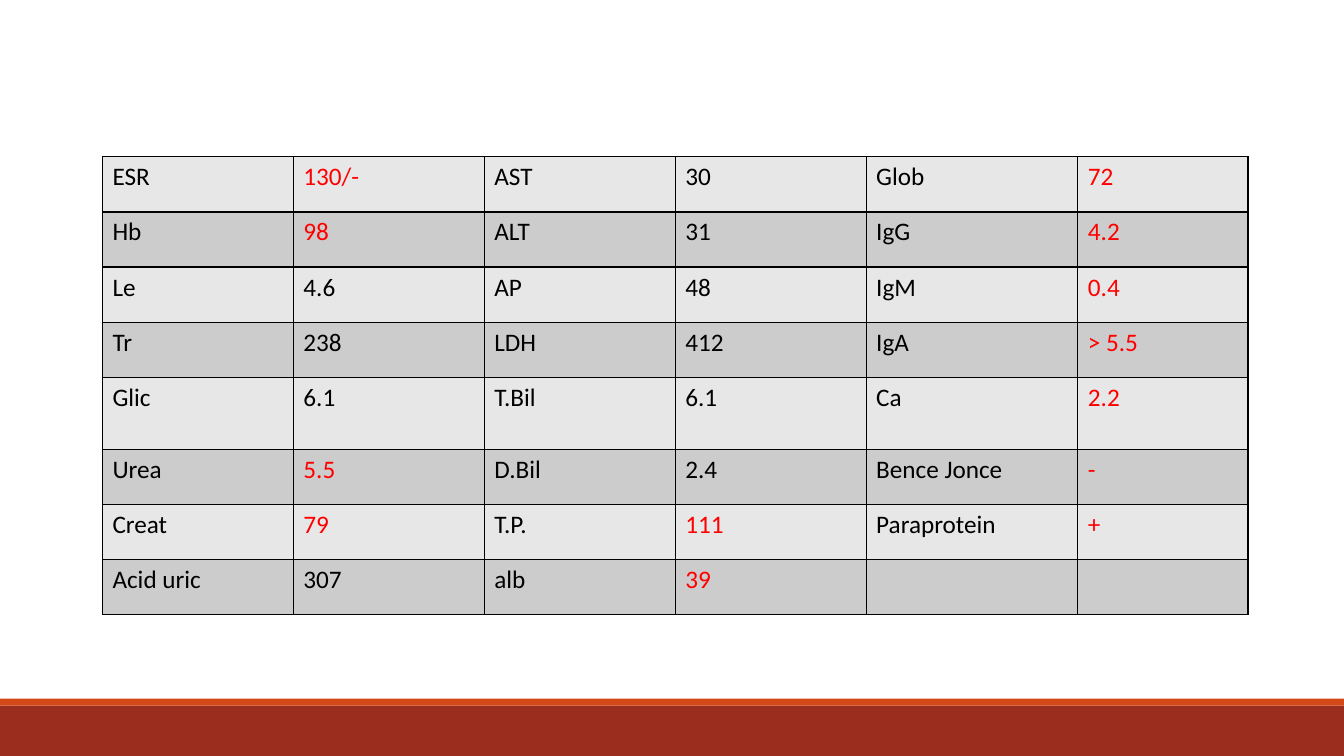
from dataclasses import dataclass

from lxml.etree import SubElement
from pptx import Presentation
from pptx.dml.color import RGBColor
from pptx.enum.shapes import MSO_SHAPE
from pptx.oxml.ns import qn
from pptx.slide import Slide
from pptx.table import _Cell
from pptx.util import Pt

SLIDE_WIDTH, SLIDE_HEIGHT = 960, 540
BLACK, RED = "000000", "FF0000"
ROW_FILLS = ("E7E7E7", "CCCCCC")
COLUMN_WIDTHS = (136.4, 136.4, 136.4, 136.4, 151.2, 121.6)
ROW_HEIGHT, TALL_ROW_HEIGHT, TALL_ROW = 39.4, 51.4, 4


@dataclass(frozen=True)
class Band:
    top: float
    height: float
    color: str


@dataclass(frozen=True)
class LabResult:
    test: str
    value: str
    abnormal: bool = False


FOOTER_BANDS = (Band(504, 36, "9B2D1F"), Band(499, 5, "D34817"))

# Each panel fills two columns of the table: test and value
PANELS = (
    (
        LabResult("ESR", "130/-", True),
        LabResult("Hb", "98", True),
        LabResult("Le", "4.6"),
        LabResult("Tr", "238"),
        LabResult("Glic", "6.1"),
        LabResult("Urea", "5.5", True),
        LabResult("Creat", "79", True),
        LabResult("Acid uric", "307"),
    ),
    (
        LabResult("AST", "30"),
        LabResult("ALT", "31"),
        LabResult("AP", "48"),
        LabResult("LDH", "412"),
        LabResult("T.Bil", "6.1"),
        LabResult("D.Bil", "2.4"),
        LabResult("T.P.", "111", True),
        LabResult("alb", "39", True),
    ),
    (
        LabResult("Glob", "72", True),
        LabResult("IgG", "4.2", True),
        LabResult("IgM", "0.4", True),
        LabResult("IgA", "> 5.5", True),
        LabResult("Ca", "2.2", True),
        LabResult("Bence Jonce", "-", True),
        LabResult("Paraprotein", "+", True),
    ),
)


def rgb(color: str) -> RGBColor:
    return RGBColor.from_string(color)


def draw_band(slide: Slide, band: Band) -> None:
    shape = slide.shapes.add_shape(
        MSO_SHAPE.RECTANGLE, Pt(0), Pt(band.top), Pt(SLIDE_WIDTH), Pt(band.height)
    )
    shape.shadow.inherit = False
    shape.fill.solid()
    shape.fill.fore_color.rgb = rgb(band.color)
    shape.line.fill.background()


def style_cell(cell: _Cell, fill: str) -> None:
    # Borders come before the fill in the cell properties
    properties = cell._tc.get_or_add_tcPr()
    for side in ("a:lnL", "a:lnR", "a:lnT", "a:lnB"):
        border = SubElement(properties, qn(side), w=str(Pt(1)))
        SubElement(SubElement(border, qn("a:solidFill")), qn("a:srgbClr"), val=BLACK)
    cell.fill.solid()
    cell.fill.fore_color.rgb = rgb(fill)


def write_cell(cell: _Cell, text: str, color: str) -> None:
    cell.text_frame.text = text
    font = cell.text_frame.paragraphs[0].runs[0].font
    font.name = "Calibri"
    font.size = Pt(18)
    font.bold = False
    font.color.rgb = rgb(color)


def draw_results_table(slide: Slide) -> None:
    row_count = max(len(panel) for panel in PANELS)
    heights = [TALL_ROW_HEIGHT if row == TALL_ROW else ROW_HEIGHT for row in range(row_count)]
    table = slide.shapes.add_table(
        row_count, len(COLUMN_WIDTHS), Pt(73.2), Pt(112), Pt(sum(COLUMN_WIDTHS)), Pt(sum(heights))
    ).table
    for column, width in zip(table.columns, COLUMN_WIDTHS):
        column.width = Pt(width)
    for row_index, (row, height) in enumerate(zip(table.rows, heights)):
        row.height = Pt(height)
        for cell in row.cells:
            style_cell(cell, ROW_FILLS[row_index % 2])
    for panel_index, panel in enumerate(PANELS):
        for row_index, result in enumerate(panel):
            write_cell(table.cell(row_index, 2 * panel_index), result.test, BLACK)
            value_color = RED if result.abnormal else BLACK
            write_cell(table.cell(row_index, 2 * panel_index + 1), result.value, value_color)


def main() -> None:
    presentation = Presentation()
    presentation.slide_width = Pt(SLIDE_WIDTH)
    presentation.slide_height = Pt(SLIDE_HEIGHT)
    slide = presentation.slides.add_slide(presentation.slide_layouts[6])

    # Footer
    for band in FOOTER_BANDS:
        draw_band(slide, band)

    # Laboratory results
    draw_results_table(slide)
    presentation.save("out.pptx")


if __name__ == "__main__":
    main()
